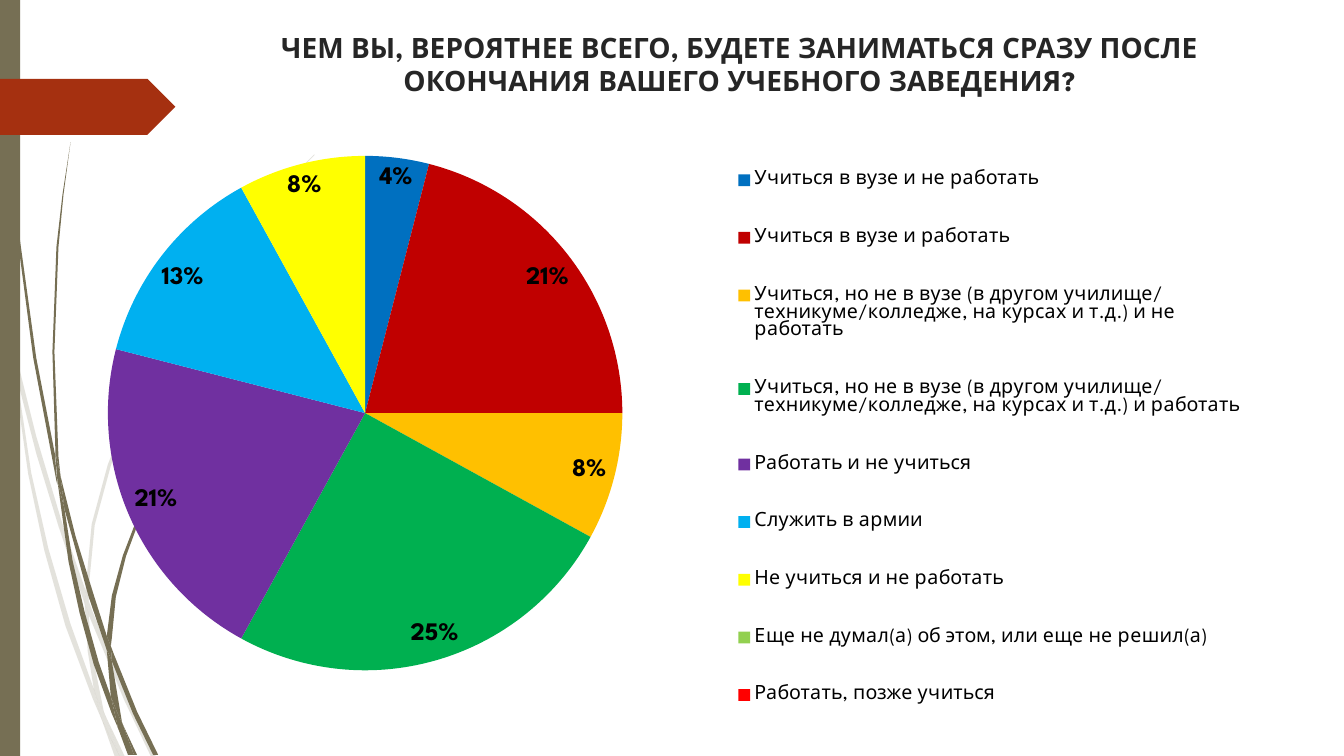
from lxml import etree
from pptx import Presentation
from pptx.chart.data import CategoryChartData as ChartData
from pptx.dml.color import RGBColor as RGB
from pptx.enum.chart import XL_CHART_TYPE as Kind, XL_LABEL_POSITION as Spot
from pptx.enum.chart import XL_LEGEND_POSITION as Side
from pptx.enum.shapes import MSO_SHAPE as Shape
from pptx.enum.text import MSO_ANCHOR as Anchor, PP_ALIGN as Align
from pptx.oxml.ns import qn
from pptx.util import Pt

FACE = "League Spartan"
HUES = {"olive": "766F54", "rust": "A53010", "title": "262626", "black": "000000"}

# Grass blades: outline corners on a grid of 0.72 pt
GRID = Pt(0.72)
PALE = [
    [(11, 350), (9, 322), (0, 282), (0, 299), (10, 344)],
    [(58, 522), (84, 599), (85, 586), (62, 520), (36, 433), (14, 345), (17, 376),
     (36, 450)],
    [(92, 607), (88, 596), (88, 610), (123, 694), (150, 751), (155, 751), (127, 692)],
    [(119, 751), (124, 751), (105, 711)],
    [(93, 683), (70, 619), (48, 544), (31, 469), (17, 376), (11, 350), (28, 470),
     (44, 546), (65, 621), (92, 693), (101, 714), (99, 707)],
    [(84, 599), (87, 646), (93, 683), (96, 692), (105, 711), (103, 706), (91, 646),
     (88, 610), (88, 608)],
    [(88, 584), (94, 521), (110, 462), (132, 404), (160, 349), (192, 296), (229, 245),
     (268, 198), (312, 154), (312, 153), (268, 197), (228, 244), (190, 295),
     (158, 348), (130, 403), (107, 461), (91, 520), (85, 584), (85, 586), (88, 596)],
    [(101, 714), (114, 751), (119, 751)],
    [(88, 608), (88, 610), (88, 596), (85, 586), (84, 599)],
    [(96, 692), (93, 683), (99, 707), (101, 714), (119, 751), (105, 711)],
]
DARK = [
    [(7, 110), (17, 233), (33, 355), (56, 477), (57, 481), (55, 457), (55, 453),
     (36, 355), (19, 232), (8, 109), (5, 48), (3, 0), (3, 48)],
    [(88, 592), (106, 645), (106, 631), (93, 590), (75, 532), (60, 472), (64, 505)],
    [(113, 649), (110, 641), (111, 656), (132, 708), (152, 749), (157, 749),
     (136, 706)],
    [(110, 691), (98, 657), (84, 607), (72, 556), (64, 505), (57, 477), (68, 557),
     (79, 608), (93, 659), (111, 708), (117, 722), (116, 717)],
    [(60, 472), (58, 453), (54, 349), (58, 245), (63, 193), (70, 141), (62, 193),
     (56, 245), (52, 349), (55, 449)],
    [(133, 749), (136, 749), (122, 719)],
    [(57, 477), (64, 505), (60, 472), (55, 449), (55, 453)],
    [(111, 633), (115, 592), (125, 552), (139, 514), (158, 476), (180, 440),
     (205, 406), (231, 374), (260, 344), (245, 358), (204, 405), (179, 439),
     (156, 474), (137, 512), (122, 551), (111, 591), (106, 631), (110, 641)],
    [(117, 722), (127, 749), (131, 749)],
    [(106, 645), (110, 691), (116, 706), (122, 719), (121, 716), (111, 656),
     (109, 651)],
    [(106, 645), (109, 651), (111, 656), (110, 641), (106, 631)],
    [(116, 706), (110, 691), (116, 717), (117, 722), (130, 749), (133, 749),
     (122, 719)],
]
SLICES = [
    ("Учиться в вузе и не работать", 4, "0070C0"),
    ("Учиться в вузе и работать", 21, "C00000"),
    ("Учиться, но не в вузе (в другом училище/техникуме/колледже, "
     "на курсах и т.д.) и не работать", 8, "FFC000"),
    ("Учиться, но не в вузе (в другом училище/техникуме/колледже, "
     "на курсах и т.д.) и работать", 25, "00B050"),
    ("Работать и не учиться", 21, "7030A0"),
    ("Служить в армии", 13, "00B0F0"),
    ("Не учиться и не работать", 8, "FFFF00"),
    ("Еще не думал(а) об этом, или еще не решил(а)", 0, "92D050"),
    ("Работать, позже учиться", 0, "FF0000"),
]


def paint(shape, hue):
    shape.fill.solid()
    shape.fill.fore_color.rgb = RGB.from_string(hue)
    shape.line.fill.background()
    shape.shadow.inherit = False


deck = Presentation()
deck.slide_width, deck.slide_height = Pt(960), Pt(540)
slide = deck.slides.add_slide(deck.slide_layouts[5])
shapes = slide.shapes

# Grass, side bar and arrow
for blades, alpha in ((PALE, 20), (DARK, 100)):
    for edge in blades:
        pen = shapes.build_freeform(*edge[0], scale=GRID)
        pen.add_line_segments(edge[1:], close=True)
        blade = pen.convert_to_shape()
        paint(blade, HUES["olive"])
        if alpha < 100:
            tone = blade._element.spPr.find(".//" + qn("a:srgbClr"))
            etree.SubElement(tone, qn("a:alpha"), val=str(alpha * 1000))

bar = shapes.add_shape(Shape.RECTANGLE, 0, 0, Pt(14.4), Pt(540))
paint(bar, HUES["olive"])
arrow = shapes.add_shape(Shape.PENTAGON, Pt(-0.7), Pt(56.3), Pt(126), Pt(40))
paint(arrow, HUES["rust"])

# Title
title = shapes.title
title.left, title.top, title.width, title.height = Pt(129.6), Pt(18), Pt(797), Pt(62)
frame = title.text_frame
frame.text = ("ЧЕМ ВЫ, ВЕРОЯТНЕЕ ВСЕГО, БУДЕТЕ ЗАНИМАТЬСЯ СРАЗУ ПОСЛЕ "
              "ОКОНЧАНИЯ ВАШЕГО УЧЕБНОГО ЗАВЕДЕНИЯ?")
frame.word_wrap = True
frame.vertical_anchor = Anchor.TOP
para = frame.paragraphs[0]
para.alignment = Align.CENTER

# Pie chart
data = ChartData()
data.categories = [name for name, _, _ in SLICES]
data.add_series("Series 1", [share for _, share, _ in SLICES])
chart = shapes.add_chart(Kind.PIE, Pt(44.6), Pt(86.4), Pt(854.6), Pt(445), data).chart
chart.has_title = False
chart.has_legend = True
legend = chart.legend
legend.position = Side.RIGHT
legend.include_in_layout = False
plot = chart.plots[0]
plot.vary_by_categories = True
for spot, (_, _, hue) in enumerate(SLICES):
    form = plot.series[0].points[spot].format
    form.fill.solid()
    form.fill.fore_color.rgb = RGB.from_string(hue)
    form.line.fill.background()

plot.has_data_labels = True
labels = plot.data_labels
looks = {"show_percentage": True, "show_value": False, "number_format": "0%;;",
         "number_format_is_linked": False, "position": Spot.BEST_FIT}
for key, val in looks.items():
    setattr(labels, key, val)

for font, size, bold, hue in ((para.runs[0].font, 20, True, "title"),
                              (chart.font, 18, False, "black"),
                              (legend.font, 14, False, "black"),
                              (labels.font, 18, True, "black")):
    font.name, font.size, font.bold = FACE, Pt(size), bold
    font.color.rgb = RGB.from_string(HUES[hue])

# Fixed places for pie and legend, as shares of the chart
area = chart._chartSpace.find(".//" + qn("c:plotArea"))
for host, index, inner, place in ((area, 0, True, (0.038, 0.056, 0.43, 0.826)),
                                  (legend._element, 1, False, (0.56, 0.017, 0.43, 0.983))):
    for old in host.findall(qn("c:layout")):
        host.remove(old)
    layout = etree.Element(qn("c:layout"))
    host.insert(index, layout)
    manual = etree.SubElement(layout, qn("c:manualLayout"))
    if inner:
        etree.SubElement(manual, qn("c:layoutTarget"), val="inner")
    for tag in ("xMode", "yMode"):
        etree.SubElement(manual, qn("c:" + tag), val="edge")
    for tag, val in zip("xywh", place):
        etree.SubElement(manual, qn("c:" + tag), val=str(val))

deck.save("out.pptx")
